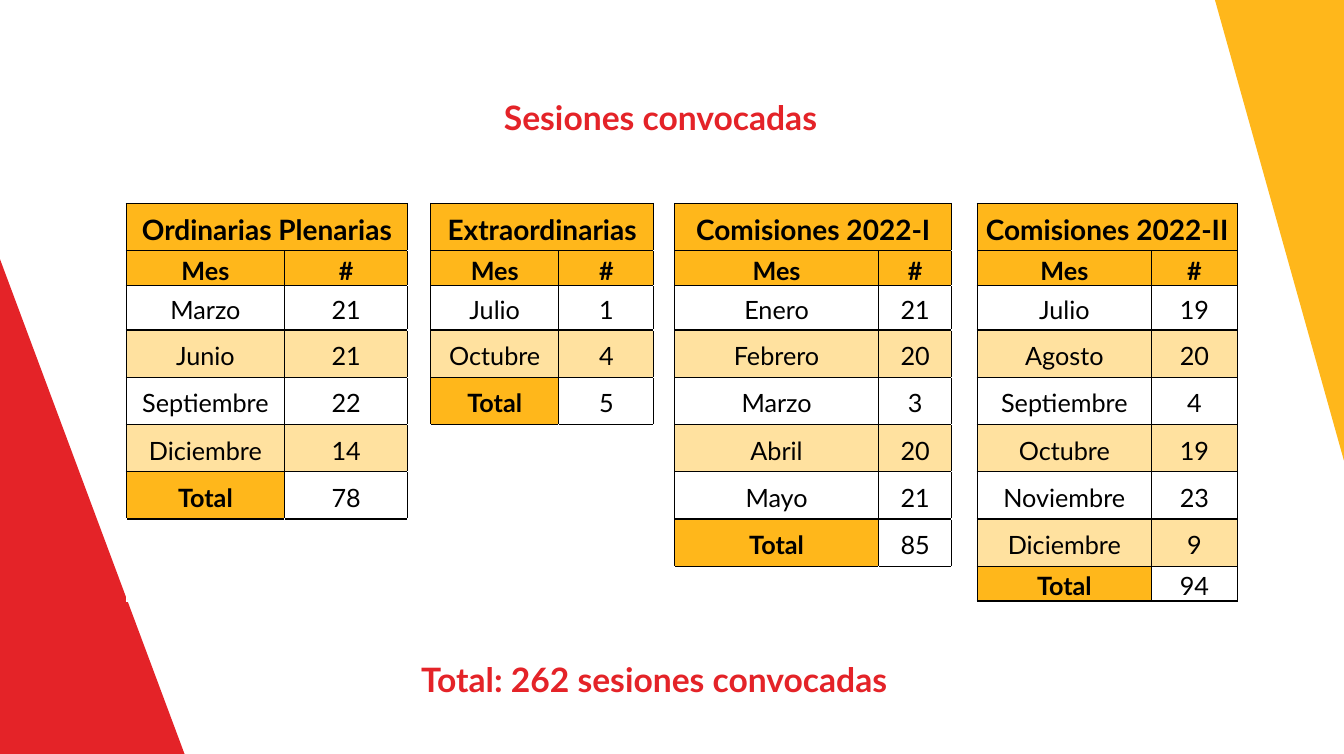
from lxml import etree
from pptx import Presentation
from pptx import util as u
from pptx.dml.color import RGBColor
from pptx.enum import text
from pptx.oxml import ns

THEME = {
    "font": "Lato",
    "red": "E42328", "amber": "FFB71B", "cream": "FFE19F",
    "black": "000000", "white": "FFFFFF",
    "title": 24, "heading": 20, "body": 18,
}


def add_text(paragraph, content, size, color, bold):
    run = paragraph.add_run()
    run.text = content
    run.font.name = THEME["font"]
    run.font.size = u.Pt(THEME[size])
    run.font.bold = bold
    run.font.color.rgb = RGBColor.from_string(THEME[color])


def add_border(cell, index, side, color):
    line = etree.Element(ns.qn(f"a:ln{side}"), w=str(u.Pt(1)))
    fill = etree.SubElement(line, ns.qn("a:solidFill"))
    etree.SubElement(fill, ns.qn("a:srgbClr"), val=THEME[color])
    cell._tc.get_or_add_tcPr().insert(index, line)


presentation = Presentation()
presentation.slide_width = u.Cm(33.86)
presentation.slide_height = u.Cm(19)
slide = presentation.slides.add_slide(presentation.slide_layouts[5])

triangles = [
    ("red", [(0, 6.53), (0, 19), (4.65, 19)]),
    ("amber", [(33.86, 0), (30.61, 0), (33.86, 11.61)]),
]
for color, corners in triangles:
    points = [(u.Cm(x), u.Cm(y)) for x, y in corners]
    builder = slide.shapes.build_freeform(*points[0])
    builder.add_line_segments(points[1:], close=True)
    triangle = builder.convert_to_shape()
    triangle.shadow.inherit = False
    triangle.fill.solid()
    triangle.fill.fore_color.rgb = RGBColor.from_string(THEME[color])
    triangle.line.fill.background()

title = slide.shapes.title
title.left, title.top, title.width, title.height = u.Cm(3.61), u.Cm(2.31), u.Cm(26.06), u.Cm(1.27)
grand_total = slide.shapes.add_textbox(u.Cm(10.36), u.Cm(16.48), u.Cm(18.42), u.Cm(1.27))
captions = [
    (title, "Sesiones convocadas", text.PP_ALIGN.CENTER),
    (grand_total, "Total: 262 sesiones convocadas", text.PP_ALIGN.LEFT),
]
for shape, content, alignment in captions:
    frame = shape.text_frame
    frame.word_wrap = True
    frame.auto_size = text.MSO_AUTO_SIZE.SHAPE_TO_FIT_TEXT
    frame.vertical_anchor = text.MSO_ANCHOR.MIDDLE
    frame.paragraphs[0].alignment = alignment
    add_text(frame.paragraphs[0], content, "title", "red", True)

sessions = [
    ("Ordinarias Plenarias", [("Marzo", 21), ("Junio", 21), ("Septiembre", 22),
                              ("Diciembre", 14), ("Total", 78)]),
    ("Extraordinarias", [("Julio", 1), ("Octubre", 4), ("Total", 5)]),
    ("Comisiones 2022-I", [("Enero", 21), ("Febrero", 20), ("Marzo", 3), ("Abril", 20),
                           ("Mayo", 21), ("Total", 85)]),
    ("Comisiones 2022-II", [("Julio", 19), ("Agosto", 20), ("Septiembre", 4), ("Octubre", 19),
                            ("Noviembre", 23), ("Diciembre", 9), ("Total", 94)]),
]
column_widths = [3.99, 3.1, 0.58, 3.23, 2.39, 0.53, 5.13, 1.85, 0.64, 4.39, 2.16]
row_heights = [1.19, 0.81, 1.12, 1.19, 1.19, 1.19, 1.19, 1.19, 0.81]

table = slide.shapes.add_table(
    len(row_heights), len(column_widths), u.Cm(3.18), u.Cm(5.13),
    u.Cm(sum(column_widths)), u.Cm(sum(row_heights))).table
table.first_row = False
table.horz_banding = False
for column, width in zip(table.columns, column_widths):
    column.width = u.Cm(width)
for row, height in zip(table.rows, row_heights):
    row.height = u.Cm(height)

entries = {}
for group, (heading, months) in enumerate(sessions):
    first = group * 3
    lines = [(heading, ""), ("Mes", "#")] + months
    for row, line in enumerate(lines):
        for offset, value in enumerate(line):
            is_total = line[0] == "Total"
            strong = row < 2 or (is_total and offset == 0)
            banded = row % 2 == 1 and not is_total
            fill = "amber" if strong else "cream" if banded else None
            entries[row, first + offset] = (str(value), strong, fill)
    table.cell(0, first).merge(table.cell(0, first + 1))

sides = [("L", 0, -1), ("R", 0, 1), ("T", -1, 0), ("B", 1, 0)]
for row in range(len(row_heights)):
    for column in range(len(column_widths)):
        cell = table.cell(row, column)
        cell.margin_left = cell.margin_right = u.Cm(0.13)
        cell.margin_top = cell.margin_bottom = 0
        cell.vertical_anchor = text.MSO_ANCHOR.MIDDLE
        content, strong, fill = entries.get((row, column), ("", False, None))
        if fill:
            cell.fill.solid()
            cell.fill.fore_color.rgb = RGBColor.from_string(THEME[fill])
        else:
            cell.fill.background()
        for index, (side, down, across) in enumerate(sides):
            touching = {(row, column), (row + down, column + across)}
            add_border(cell, index, side, "black" if touching & entries.keys() else "white")
        if content:
            paragraph = cell.text_frame.paragraphs[0]
            paragraph.alignment = text.PP_ALIGN.CENTER
            paragraph.line_spacing = 1.15
            add_text(paragraph, content, "heading" if row == 0 else "body", "black", strong)

presentation.save("out.pptx")
